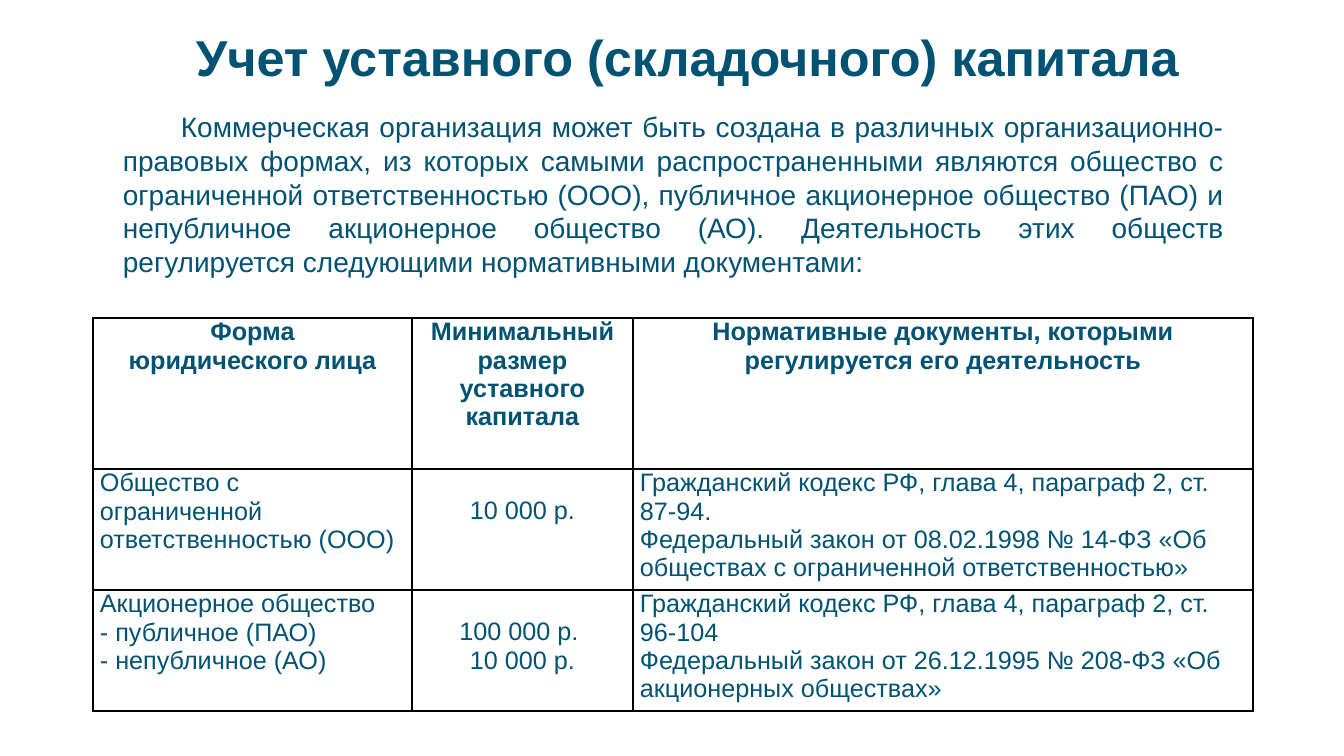
import pptx
import pptx.dml.color
import pptx.enum.text
import pptx.oxml
import pptx.oxml.ns
import pptx.util

EMU_PER_PX = 914400 / 100.8
SLIDE_SIZE = (1344, 756)
FONT = "Arial"
COLORS = {"text": "025373", "border": "000000"}
ALIGN = pptx.enum.text.PP_ALIGN

TITLE = "Учет уставного (складочного) капитала"
INTRO = (
    "Коммерческая организация может быть создана в различных "
    "организационно-правовых формах, из которых самыми распространенными "
    "являются общество с ограниченной ответственностью (ООО), публичное "
    "акционерное общество (ПАО) и непубличное акционерное общество (АО). "
    "Деятельность этих обществ регулируется следующими нормативными документами:"
)
HEADINGS = [
    ["Форма", "юридического лица"],
    ["Минимальный размер уставного капитала"],
    ["Нормативные документы, которыми регулируется его деятельность"],
]
LEGAL_FORMS = [
    [
        ["Общество с ограниченной ответственностью (ООО)"],
        ["10 000 р."],
        ["Гражданский кодекс РФ, глава 4, параграф 2, ст. 87-94.",
         "Федеральный закон от 08.02.1998 № 14-ФЗ «Об обществах с ограниченной ответственностью»"],
    ],
    [
        ["Акционерное общество", "- публичное (ПАО)", "- непубличное (АО)"],
        ["100 000 р. ", "10 000 р."],
        ["Гражданский кодекс РФ, глава 4, параграф 2, ст. 96-104",
         "Федеральный закон от 26.12.1995 № 208-ФЗ «Об акционерных обществах»"],
    ],
]

TITLE_BOX = (136, 21, 1064, 72)
TITLE_INDENT = 50
INTRO_BOX = (113, 105, 1121, 179)
INTRO_FIRST_LINE = 58
TABLE_LEFT, TABLE_TOP = 93, 318
COLUMN_WIDTHS = [319, 221, 620]
ROW_HEIGHTS = [151, 121, 121]
CELL_MARGIN = 7
CAPITAL_COLUMN = 1
CAPITAL_TOP_MARGIN = 28


def px(length):
    return pptx.util.Emu(round(length * EMU_PER_PX))


def write(frame, lines, size, bold=False, align=ALIGN.LEFT, left=0, first_line=0):
    """Put each line into its own paragraph of the frame."""
    for number, line in enumerate(lines):
        paragraph = frame.add_paragraph() if number else frame.paragraphs[0]
        paragraph.alignment = align
        properties = paragraph._p.get_or_add_pPr()
        properties.set("marL", str(px(left)))
        properties.set("indent", str(px(first_line)))
        run = paragraph.add_run()
        run.text = line
        run.font.name = FONT
        run.font.size = pptx.util.Pt(size)
        run.font.bold = bold
        run.font.color.rgb = pptx.dml.color.RGBColor.from_string(COLORS["text"])


def add_text(slide, box, line, wrap, **style):
    frame = slide.shapes.add_textbox(*map(px, box)).text_frame
    frame.word_wrap = wrap
    write(frame, [line], **style)


def add_borders(cell):
    properties = cell._tc.get_or_add_tcPr()
    for position, side in enumerate(("lnL", "lnR", "lnT", "lnB")):
        properties.insert(position, pptx.oxml.parse_xml(
            f'<a:{side} {pptx.oxml.ns.nsdecls("a")} w="{pptx.util.Pt(1)}"><a:solidFill>'
            f'<a:srgbClr val="{COLORS["border"]}"/></a:solidFill></a:{side}>'))


def add_forms_table(slide):
    rows = [HEADINGS] + LEGAL_FORMS
    table = slide.shapes.add_table(
        len(rows), len(HEADINGS), px(TABLE_LEFT), px(TABLE_TOP),
        px(sum(COLUMN_WIDTHS)), px(sum(ROW_HEIGHTS))).table
    table.first_row = table.horz_banding = False
    for column, width in zip(table.columns, COLUMN_WIDTHS):
        column.width = px(width)
    for row, height in zip(table.rows, ROW_HEIGHTS):
        row.height = px(height)

    for row_index, row in enumerate(rows):
        for column_index, lines in enumerate(row):
            heading = row_index == 0
            capital = column_index == CAPITAL_COLUMN
            cell = table.cell(row_index, column_index)
            cell.margin_left = cell.margin_right = px(CELL_MARGIN)
            cell.margin_top = px(CAPITAL_TOP_MARGIN if capital and not heading else 0)
            cell.margin_bottom = 0
            cell.fill.background()
            add_borders(cell)
            write(cell.text_frame, lines, 18, bold=heading,
                  align=ALIGN.CENTER if heading or capital else ALIGN.LEFT)


def main():
    deck = pptx.Presentation()
    deck.slide_width, deck.slide_height = map(px, SLIDE_SIZE)
    slide = deck.slides.add_slide(deck.slide_layouts[6])
    add_text(slide, TITLE_BOX, TITLE, wrap=False, size=36, bold=True, left=TITLE_INDENT)
    add_text(slide, INTRO_BOX, INTRO, wrap=True, size=20, align=ALIGN.JUSTIFY,
             first_line=INTRO_FIRST_LINE)
    add_forms_table(slide)
    deck.save("out.pptx")


if __name__ == "__main__":
    main()
